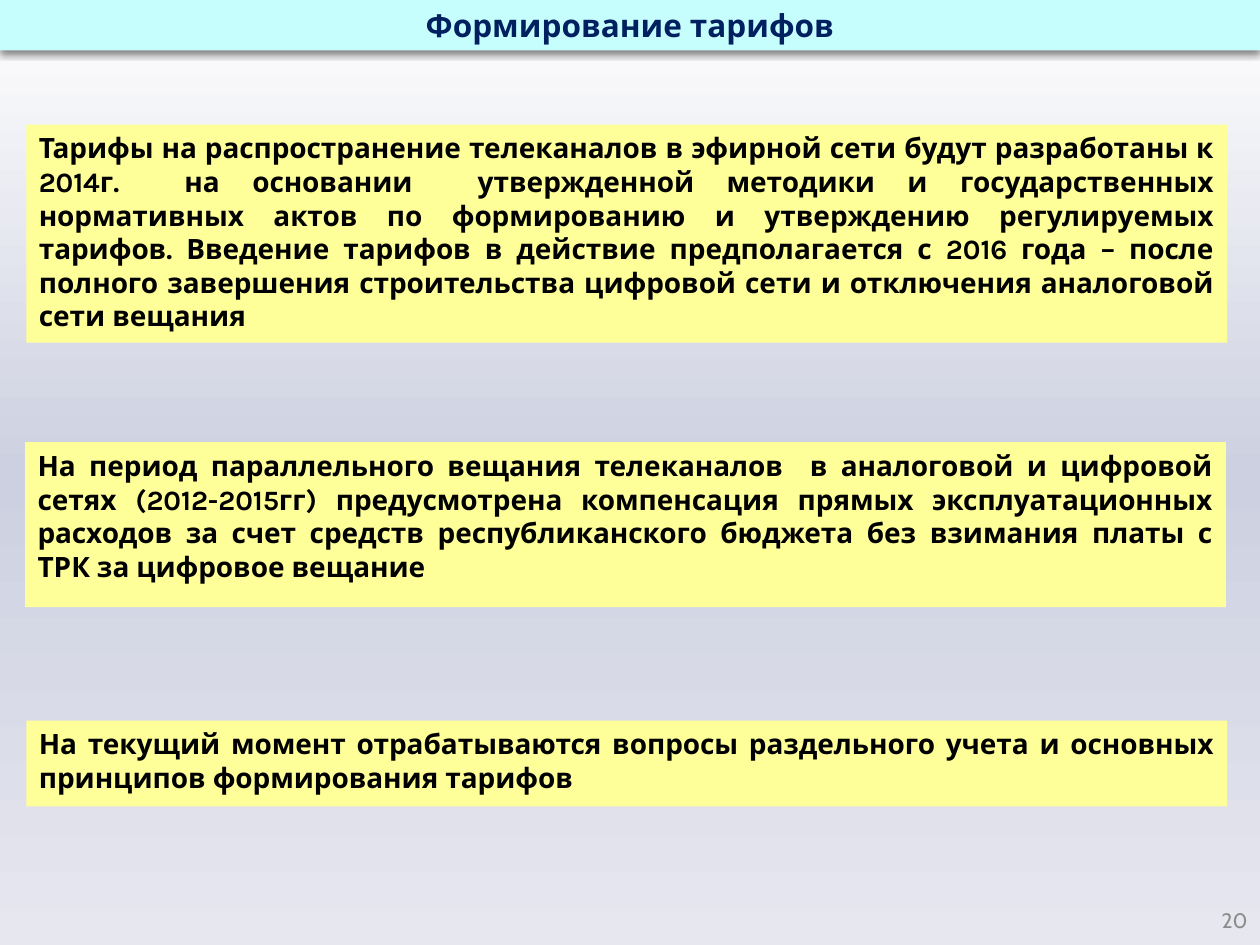
"""Build the slide on how broadcasting tariffs are formed."""
from copy import deepcopy
from dataclasses import dataclass

from lxml.etree import SubElement
from pptx import Presentation
from pptx.dml.color import RGBColor
from pptx.enum.shapes import MSO_SHAPE
from pptx.enum.text import MSO_ANCHOR, PP_ALIGN
from pptx.oxml.ns import qn
from pptx.shapes.autoshape import Shape
from pptx.slide import Slide
from pptx.util import Inches, Pt

COLS, ROWS = 100, 75


@dataclass(frozen=True)
class Theme:
    banner: str = "C6FEFD"
    title: str = "002060"
    panel: str = "FFFF99"
    body: str = "000000"
    number: str = "8C8C8C"
    shadow: str = "000000"
    backdrop: tuple[str, ...] = ("FFFFFF", "CCD0E0", "E6E7EF")
    font: str = "Karla"
    number_font: str = "Cabin"
    title_size: int = 18
    body_size: int = 16
    number_size: int = 12


@dataclass(frozen=True)
class Box:
    col: float
    row: float
    cols: float
    rows: float


@dataclass(frozen=True)
class Style:
    font: str
    size: int
    color: str
    align: PP_ALIGN
    anchor: MSO_ANCHOR = MSO_ANCHOR.MIDDLE
    bold: bool = True


@dataclass(frozen=True)
class Panel:
    box: Box
    text: str


THEME = Theme()
TITLE = Style(THEME.font, THEME.title_size, THEME.title, PP_ALIGN.CENTER)
BODY = Style(THEME.font, THEME.body_size, THEME.body, PP_ALIGN.JUSTIFY, MSO_ANCHOR.TOP)
NUMBER = Style(THEME.number_font, THEME.number_size, THEME.number, PP_ALIGN.RIGHT, bold=False)

PANELS = (
    Panel(Box(2.1, 9.9, 95.3, 17.3),
          "Тарифы на распространение телеканалов в эфирной сети будут разработаны к 2014г.  "
          "на основании  утвержденной методики и государственных нормативных актов по "
          "формированию и утверждению регулируемых тарифов. Введение тарифов в действие "
          "предполагается с 2016 года – после полного завершения строительства цифровой "
          "сети и отключения аналоговой сети вещания"),
    Panel(Box(2, 35.1, 95.3, 13.1),
          "На период параллельного вещания телеканалов  в аналоговой и цифровой сетях "
          "(2012-2015гг) предусмотрена компенсация прямых эксплуатационных расходов за счет "
          "средств республиканского бюджета без взимания платы с ТРК за цифровое вещание"),
    Panel(Box(2.1, 57.2, 95.3, 6.8),
          "На текущий момент отрабатываются вопросы раздельного учета и основных принципов "
          "формирования тарифов"),
)


def place(prs: Presentation, box: Box) -> tuple[int, int, int, int]:
    """Turn grid columns and rows into slide lengths."""
    w, h = prs.slide_width / COLS, prs.slide_height / ROWS
    return round(box.col * w), round(box.row * h), round(box.cols * w), round(box.rows * h)


def write(sp: Shape, text: str, style: Style) -> None:
    """Fill a shape with one styled paragraph."""
    tf = sp.text_frame
    tf.word_wrap = True
    tf.vertical_anchor = style.anchor
    p = tf.paragraphs[0]
    p.text = text
    p.alignment = style.align
    p.font.name = style.font
    p.font.size = Pt(style.size)
    p.font.bold = style.bold
    p.font.color.rgb = RGBColor.from_string(style.color)


def add_panel(prs: Presentation, s: Slide, panel: Panel, fill: str, style: Style) -> Shape:
    """Draw a borderless filled rectangle with text."""
    sp = s.shapes.add_shape(MSO_SHAPE.RECTANGLE, *place(prs, panel.box))
    sp.shadow.inherit = False
    sp.fill.solid()
    sp.fill.fore_color.rgb = RGBColor.from_string(fill)
    sp.line.fill.background()
    write(sp, panel.text, style)
    return sp


def drop_shadow(sp: Shape, color: str) -> None:
    """Give a shape a soft shadow falling straight down."""
    effects = sp._element.spPr.find(qn("a:effectLst"))
    shadow = SubElement(effects, qn("a:outerShdw"), blurRad=str(Pt(4)), dist=str(Pt(2)),
                        dir="5400000", algn="t", rotWithShape="0")
    tint = SubElement(shadow, qn("a:srgbClr"), val=color)
    SubElement(tint, qn("a:alpha"), val="50000")


def paint_background(s: Slide, colors: tuple[str, ...]) -> None:
    """Paint an evenly spaced gradient running from top to bottom."""
    fill = s.background.fill
    fill.gradient()
    fill.gradient_angle = 270
    stops = s._element.find(".//" + qn("a:gsLst"))
    while len(stops) < len(colors):
        stops.append(deepcopy(stops[-1]))
    for i, (stop, color) in enumerate(zip(fill.gradient_stops, colors)):
        stop.position = i / (len(colors) - 1)
        stop.color.rgb = RGBColor.from_string(color)


def main() -> None:
    """Build and save the slide."""
    prs = Presentation()
    prs.slide_width, prs.slide_height = Inches(10), Inches(7.5)
    s = prs.slides.add_slide(prs.slide_layouts[6])
    paint_background(s, THEME.backdrop)
    banner = Panel(Box(0, 0, COLS, 4), "Формирование тарифов")
    drop_shadow(add_panel(prs, s, banner, THEME.banner, TITLE), THEME.shadow)
    for panel in PANELS:
        add_panel(prs, s, panel, THEME.panel, BODY)
    write(s.shapes.add_textbox(*place(prs, Box(95.3, 71, 4.7, 4))), "20", NUMBER)
    prs.save("out.pptx")


if __name__ == "__main__":
    main()
